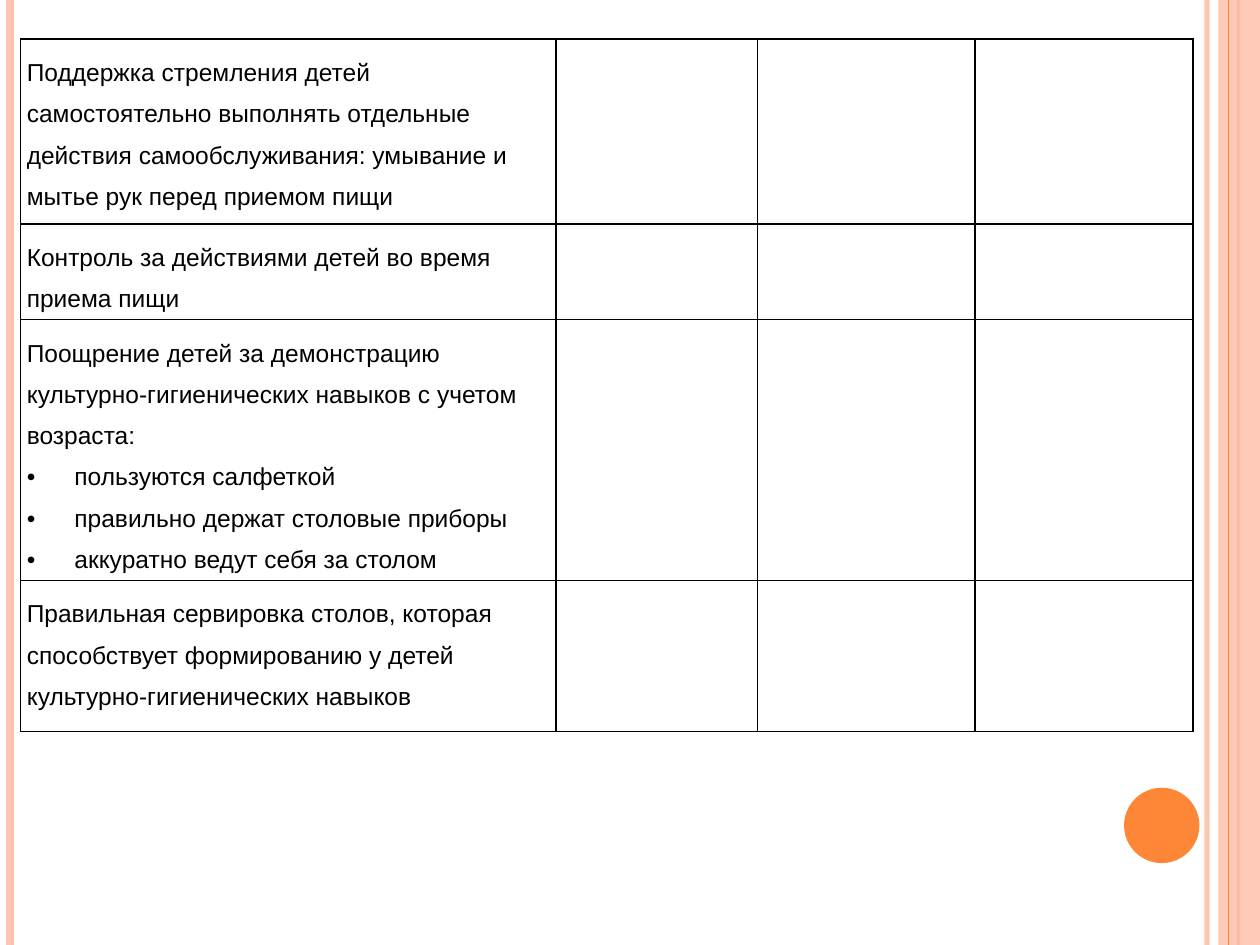
from lxml import etree
from pptx import Presentation
from pptx.dml.color import RGBColor
from pptx.enum import shapes
from pptx.oxml import ns
from pptx.util import Cm, Pt

COLORS = {"peach": "FEC3AE", "orange": "FE8637", "black": "000000"}
FONT, FONT_SIZE = "Arial", Pt(14)
SLIDE_WIDTH, SLIDE_HEIGHT = Cm(25.4), Cm(19.05)

# Each row: (height in cm, opening text, bullet points)
ROWS = [
    (3.73, "Поддержка стремления детей самостоятельно выполнять отдельные "
           "действия самообслуживания: умывание и мытье рук перед приемом пищи", []),
    (1.65, "Контроль за действиями детей во время приема пищи", []),
    (5.11, "Поощрение детей за демонстрацию культурно-гигиенических навыков "
           "с учетом возраста:",
     ["пользуются салфеткой", "правильно держат столовые приборы",
      "аккуратно ведут себя за столом"]),
    (3.05, "Правильная сервировка столов, которая способствует формированию "
           "у детей культурно-гигиенических навыков", []),
]
COLUMN_WIDTHS = [10.8, 4.06, 4.39, 4.39]
TABLE_LEFT, TABLE_TOP = 0.41, 0.79
CELL_INSET = Cm(0.13)
BULLET_INDENT = Cm(0.96)

# Vertical stripes: (x in cm, colour, width in points, opacity in percent)
STRIPES_BELOW_BAND = [(24.33, "peach", 3, 93), (0.2, "peach", 4.5, 100),
                      (24.97, "orange", 1.5, 100)]
STRIPES_ABOVE_BAND = [(24.77, "orange", 0.75, 100)]


def rgb(name):
    return RGBColor.from_string(COLORS[name])


def add_child(parent, tag, **attributes):
    return etree.SubElement(parent, ns.qn(tag), attributes)


def set_opacity(element, percent):
    color = element.find(".//" + ns.qn("a:srgbClr"))
    add_child(color, "a:alpha", val=str(percent * 1000))


def add_stripe(slide, x, color, width, opacity):
    stripe = slide.shapes.add_connector(
        shapes.MSO_CONNECTOR.STRAIGHT, Cm(x), 0, Cm(x), SLIDE_HEIGHT)
    stripe.line.color.rgb = rgb(color)
    stripe.line.width = Pt(width)
    properties = stripe._element.spPr
    if opacity < 100:
        set_opacity(properties, opacity)
    add_child(properties, "a:effectLst")


def add_plain_shape(slide, kind, color, left, top, width, height):
    shape = slide.shapes.add_shape(kind, left, top, width, height)
    shape.shadow.inherit = False
    shape.fill.solid()
    shape.fill.fore_color.rgb = rgb(color)
    shape.line.fill.background()
    return shape


def style_cell(cell):
    cell.margin_left = cell.margin_right = CELL_INSET
    cell.margin_top = cell.margin_bottom = CELL_INSET
    properties = cell._tc.get_or_add_tcPr()
    for side in "LRTB":
        border = add_child(properties, f"a:ln{side}", w=str(Pt(1)))
        fill = add_child(border, "a:solidFill")
        add_child(fill, "a:srgbClr", val=COLORS["black"])
    cell.fill.background()


def add_bullet(paragraph):
    properties = paragraph._p.get_or_add_pPr()
    properties.set("marL", str(BULLET_INDENT))
    properties.set("indent", str(-BULLET_INDENT))
    add_child(properties, "a:buFont", typeface=FONT)
    add_child(properties, "a:buChar", char="•")


def write_cell(cell, opening, bullets):
    frame = cell.text_frame
    frame.text = "\n".join([opening, *bullets])
    for index, paragraph in enumerate(frame.paragraphs):
        paragraph.line_spacing = 1.5
        if index:
            add_bullet(paragraph)
        paragraph.font.name = FONT
        paragraph.font.size = FONT_SIZE
        paragraph.font.color.rgb = rgb("black")
        for run in paragraph.runs:
            run.font.name = FONT
            run.font.size = FONT_SIZE
            run.font.color.rgb = rgb("black")


def add_checklist(slide):
    height = sum(row[0] for row in ROWS)
    table = slide.shapes.add_table(
        len(ROWS), len(COLUMN_WIDTHS), Cm(TABLE_LEFT), Cm(TABLE_TOP),
        Cm(sum(COLUMN_WIDTHS)), Cm(height)).table
    table.first_row = table.horz_banding = False
    for column, width in zip(table.columns, COLUMN_WIDTHS):
        column.width = Cm(width)
    for row, (row_height, opening, bullets) in zip(table.rows, ROWS):
        row.height = Cm(row_height)
        for cell in row.cells:
            style_cell(cell)
        write_cell(row.cells[0], opening, bullets)


def main():
    presentation = Presentation()
    presentation.slide_width, presentation.slide_height = SLIDE_WIDTH, SLIDE_HEIGHT
    slide = presentation.slides.add_slide(presentation.slide_layouts[6])

    for stripe in STRIPES_BELOW_BAND:
        add_stripe(slide, *stripe)
    band_left = Cm(24.56)
    band = add_plain_shape(slide, shapes.MSO_SHAPE.RECTANGLE, "peach",
                           band_left, 0, SLIDE_WIDTH - band_left, SLIDE_HEIGHT)
    set_opacity(band._element.spPr, 87)
    for stripe in STRIPES_ABOVE_BAND:
        add_stripe(slide, *stripe)
    add_plain_shape(slide, shapes.MSO_SHAPE.OVAL, "orange",
                    Cm(22.66), Cm(15.88), Cm(1.52), Cm(1.52))
    add_checklist(slide)
    presentation.save("out.pptx")


if __name__ == "__main__":
    main()
